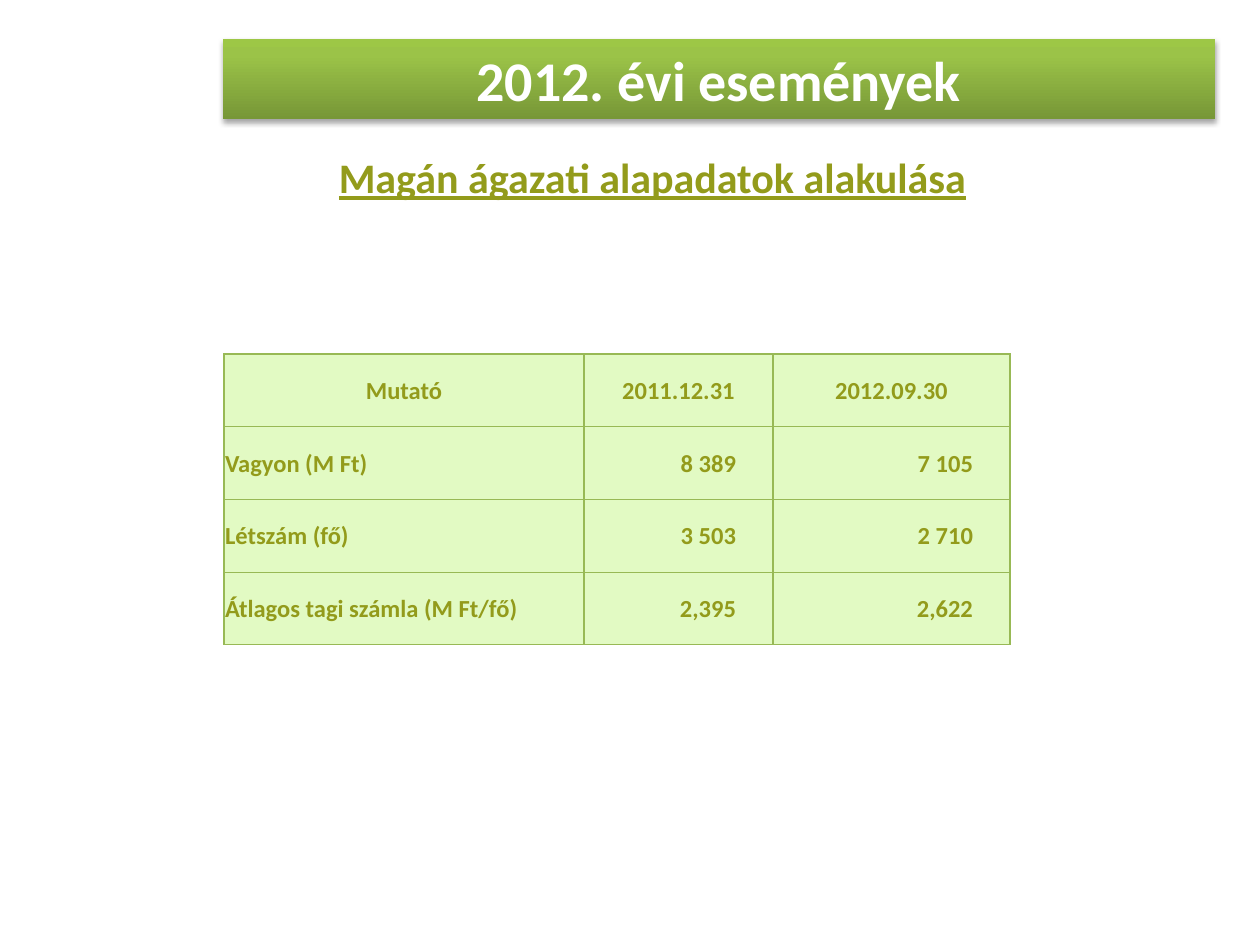
from pptx import Presentation
from pptx.dml.color import RGBColor
from pptx.enum.text import MSO_ANCHOR as Anchor, PP_ALIGN as Align
from pptx.oxml import parse_xml
from pptx.oxml.ns import nsdecls
from pptx.util import Emu, Pt

WHITE = RGBColor(0xFF, 0xFF, 0xFF)
OLIVE = RGBColor(0x93, 0x9B, 0x1B)
PALE_GREEN = RGBColor(0xE2, 0xFA, 0xC3)
BORDER_GREEN = RGBColor(0x98, 0xB9, 0x55)
BAR_STOPS = [
    (0, RGBColor(0x77, 0x97, 0x37)),
    (80, RGBColor(0x9B, 0xC3, 0x48)),
    (100, RGBColor(0x9D, 0xC7, 0x46)),
]


def px(length):
    return Emu(round(length * 914400 / 126))


def style(target, values):
    for name, value in values.items():
        setattr(target, name, value)


deck = Presentation()
style(deck, {"slide_width": px(1260), "slide_height": px(945)})
slide = deck.slides.add_slide(deck.slide_layouts[1])

heading = slide.shapes.title
style(heading, {"left": px(223), "top": px(39), "width": px(992), "height": px(80)})
stops = "".join(
    f'<a:gs pos="{position * 1000}"><a:srgbClr val="{color}"/></a:gs>'
    for position, color in BAR_STOPS
)
bar = heading.element.spPr
bar.append(parse_xml(
    f'<a:gradFill {nsdecls("a")} rotWithShape="1"><a:gsLst>{stops}</a:gsLst>'
    '<a:lin ang="16200000" scaled="0"/></a:gradFill>'
))
bar.append(parse_xml(
    f'<a:effectLst {nsdecls("a")}><a:outerShdw blurRad="{Pt(3.1)}" dist="{Pt(1.8)}" '
    'dir="5400000" rotWithShape="0"><a:srgbClr val="000000"><a:alpha val="35000"/>'
    '</a:srgbClr></a:outerShdw></a:effectLst>'
))
heading.text_frame.text = "2012. évi események"
heading.text_frame.vertical_anchor = Anchor.MIDDLE
heading_line = heading.text_frame.paragraphs[0]
heading_line.alignment = Align.CENTER
style(heading_line.runs[0].font, {"name": "Calibri", "size": Pt(32), "bold": True})
heading_line.runs[0].font.color.rgb = WHITE

subheading = slide.placeholders[1]
style(subheading, {"left": px(54), "top": px(145), "width": px(1134), "height": px(714)})
subheading.text_frame.text = "Magán ágazati alapadatok alakulása"
subheading_line = subheading.text_frame.paragraphs[0]
indents = subheading_line._p.get_or_add_pPr()
indents.set("marL", str(px(63)))
indents.set("indent", "0")
indents.append(parse_xml(f'<a:buNone {nsdecls("a")}/>'))
style(subheading_line, {
    "level": 1, "alignment": Align.CENTER, "space_before": Pt(0), "space_after": Pt(18),
})
style(subheading_line.runs[0].font, {
    "name": "Calibri", "size": Pt(24), "bold": True, "underline": True,
})
subheading_line.runs[0].font.color.rgb = OLIVE

figures = [
    ["Mutató", "2011.12.31", "2012.09.30"],
    ["Vagyon (M Ft)", "8 389", "7 105"],
    ["Létszám (fő)", "3 503", "2 710"],
    ["Átlagos tagi számla (M Ft/fő)", "2,395", "2,622"],
]
column_widths = [360, 189, 237]
table = slide.shapes.add_table(
    len(figures), len(column_widths), px(224), px(354), px(sum(column_widths)), px(291)
).table
style(table, {"first_row": False, "horz_banding": False})
for column, width in zip(table.columns, column_widths):
    column.width = px(width)

for row_index, row in enumerate(figures):
    for column_index, entry in enumerate(row):
        cell = table.cell(row_index, column_index)
        is_header = row_index == 0
        is_number = not is_header and column_index > 0
        borders = cell._tc.get_or_add_tcPr()
        for side in "LRTB":
            borders.append(parse_xml(
                f'<a:ln{side} {nsdecls("a")} w="{Pt(0.75)}"><a:solidFill>'
                f'<a:srgbClr val="{BORDER_GREEN}"/></a:solidFill></a:ln{side}>'
            ))
        cell.fill.solid()
        cell.fill.fore_color.rgb = PALE_GREEN
        style(cell, {
            "text": entry,
            "vertical_anchor": Anchor.MIDDLE,
            "margin_left": px(1),
            "margin_top": px(1),
            "margin_right": px(37 if is_number else 1),
            "margin_bottom": 0,
        })
        line = cell.text_frame.paragraphs[0]
        line.alignment = Align.CENTER if is_header else Align.RIGHT if is_number else Align.LEFT
        style(line.runs[0].font, {"name": "Calibri", "size": Pt(14), "bold": True})
        line.runs[0].font.color.rgb = OLIVE

deck.save("out.pptx")
